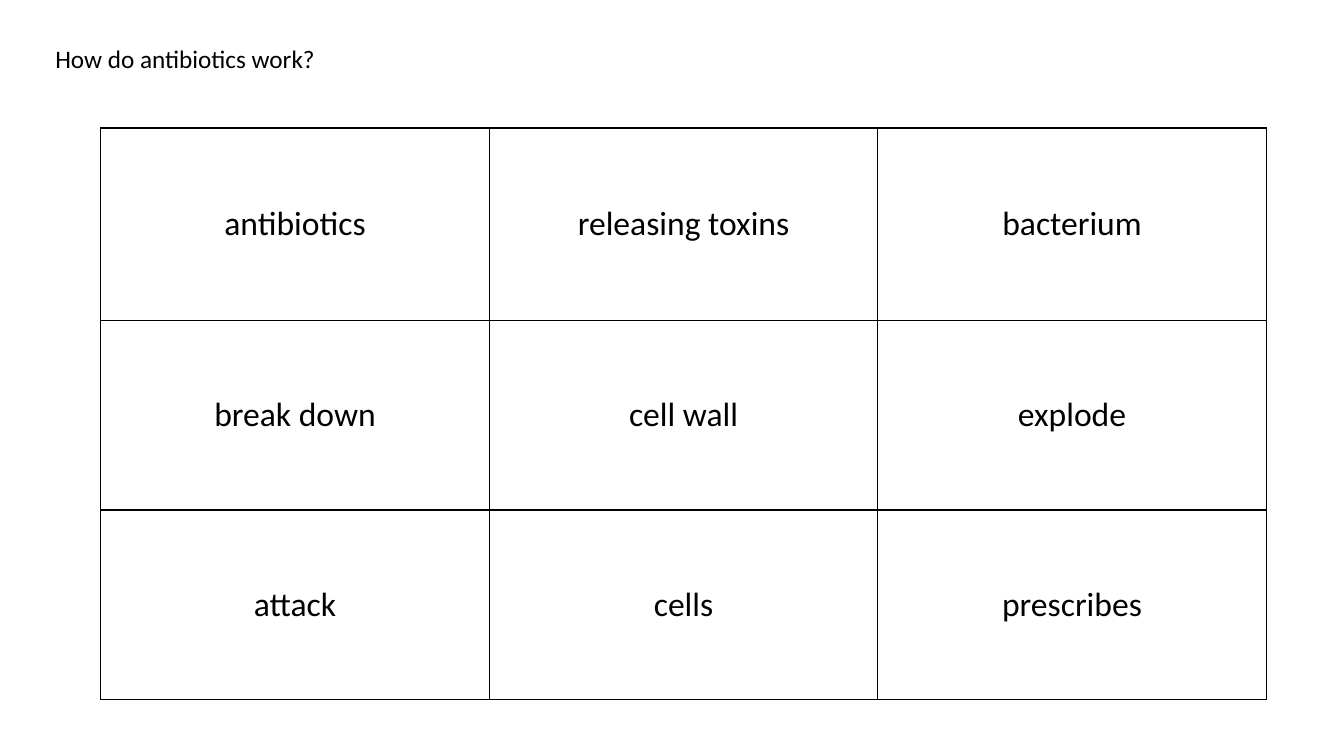
from lxml.etree import SubElement as Sub
from pptx import Presentation
from pptx.dml.color import RGBColor
from pptx.enum.text import MSO_ANCHOR as Anchor, MSO_AUTO_SIZE as Fit, PP_ALIGN as Align
from pptx.oxml.ns import qn
from pptx.util import Inches, Pt


def paint(code):
    return RGBColor.from_string(code)


class Page:
    """Holds the text style and the current slide."""

    face = "Calibri"
    ink = "000000"

    def __init__(self, deck):
        self.slide = deck.slides.add_slide(deck.slide_layouts[6])

    def label(self, frame, words, size, align):
        para = frame.paragraphs[0]
        para.text = words
        para.alignment = align
        para.font.name = self.face
        para.font.size = Pt(size)
        para.font.color.rgb = paint(self.ink)

    def text(self, words, left, top, width, height, size):
        box = self.slide.shapes.add_textbox(
            Inches(left), Inches(top), Inches(width), Inches(height))
        frame = box.text_frame
        frame.word_wrap = False
        frame.auto_size = Fit.SHAPE_TO_FIT_TEXT
        self.label(frame, words, size, Align.LEFT)

    def border(self, cell):
        props = cell._tc.get_or_add_tcPr()
        for side in ("lnL", "lnR", "lnT", "lnB"):
            line = Sub(props, qn(f"a:{side}"), w=str(Pt(1)))
            fill = Sub(line, qn("a:solidFill"))
            Sub(fill, qn("a:srgbClr"), val=self.ink)

    def table(self, rows, left, top, width, tall, size):
        shape = self.slide.shapes.add_table(
            len(rows), len(rows[0]), Inches(left), Inches(top),
            Inches(width), Inches(sum(tall)))
        grid = shape.table
        grid.first_row = False
        grid.horz_banding = False
        for row, words, height in zip(grid.rows, rows, tall):
            row.height = Inches(height)
            for cell, word in zip(row.cells, words):
                self.border(cell)
                cell.fill.background()
                cell.vertical_anchor = Anchor.MIDDLE
                cell.margin_left = cell.margin_right = Inches(0.07)
                cell.margin_top = cell.margin_bottom = Inches(0.07)
                self.label(cell.text_frame, word, size, Align.CENTER)


def main():
    deck = Presentation()
    deck.slide_width = Inches(13.33)
    deck.slide_height = Inches(7.5)
    page = Page(deck)
    terms = [
        ("antibiotics", "releasing toxins", "bacterium"),
        ("break down", "cell wall", "explode"),
        ("attack", "cells", "prescribes"),
    ]
    page.table(terms, 1, 1.27, 11.56, (1.91, 1.88, 1.88), 24)
    page.text("How do antibiotics work?", 0.45, 0.38, 2.81, 0.4, 18)
    deck.save("out.pptx")


if __name__ == "__main__":
    main()
